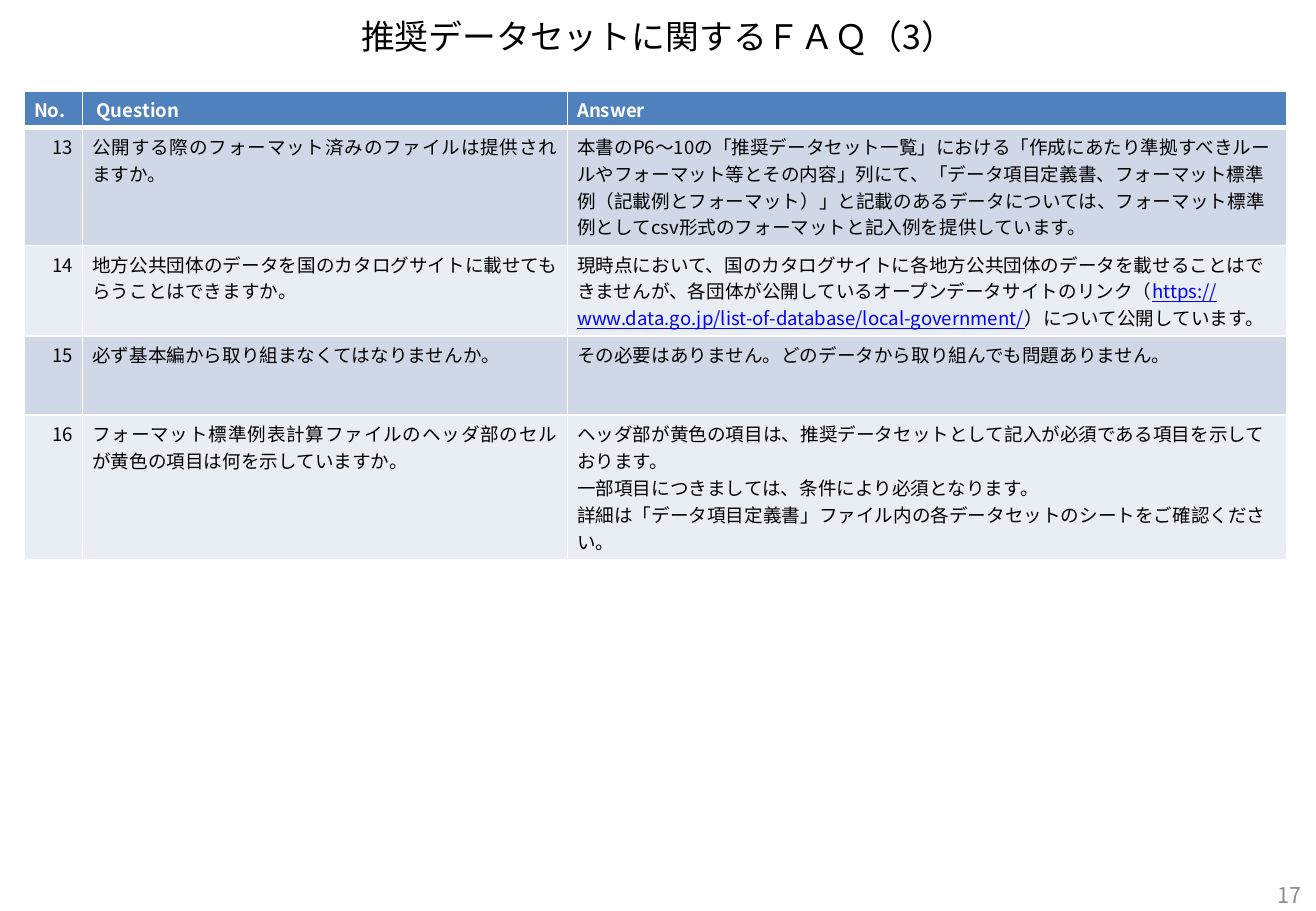
import pptx
import pptx.dml.color
import pptx.enum.text
import pptx.oxml.ns
import pptx.util
from dataclasses import dataclass
from lxml import etree

inch = pptx.util.Inches
qn = pptx.oxml.ns.qn
rgb = pptx.dml.color.RGBColor.from_string
align = pptx.enum.text.PP_ALIGN
anchor = pptx.enum.text.MSO_ANCHOR


@dataclass
class Theme:
    font: str = "Noto Sans CJK JP"
    text: str = "000000"
    light: str = "FFFFFF"
    header: str = "4F81BD"
    bands: tuple = ("D0D8E8", "E9EDF4")
    link: str = "0000FF"
    number: str = "8C8C8C"
    title_size: float = 20
    body_size: float = 11
    number_size: float = 12.9


theme = Theme()


def style(p, size, color, alignment, bold=False):
    p.alignment = alignment
    p.font.size = pptx.util.Pt(size)
    p.font.bold = bold
    p.font.color.rgb = rgb(color)
    p.font.name = theme.font
    latin = p._p.pPr.find(qn("a:defRPr")).find(qn("a:latin"))
    latin.addnext(latin.makeelement(qn("a:ea"), {"typeface": theme.font}))


def border(cell, side, points):
    ln = etree.SubElement(cell._tc.get_or_add_tcPr(), qn(f"a:ln{side}"), w=str(pptx.util.Pt(points)))
    fill = etree.SubElement(ln, qn("a:solidFill"))
    etree.SubElement(fill, qn("a:srgbClr"), val=theme.light)


prs = pptx.Presentation()
prs.slide_width, prs.slide_height = inch(10.83), inch(7.5)
s = prs.slides.add_slide(prs.slide_layouts[5])

# Title
title = s.shapes.title
title.left, title.top, title.width, title.height = inch(0.54), inch(0.01), inch(9.75), inch(0.57)
tf = title.text_frame
tf.text = "推奨データセットに関するＦＡＱ（3）"
tf.vertical_anchor = anchor.MIDDLE
tf.auto_size = pptx.enum.text.MSO_AUTO_SIZE.NONE
style(tf.paragraphs[0], theme.title_size, theme.text, align.CENTER)

# Questions and answers: each line of an answer is a paragraph
url = "https://www.data.go.jp/list-of-database/local-government/"
faq = [
    ("No.", " Question", "Answer"),
    ("13", "公開する際のフォーマット済みのファイルは提供されますか。",
     "本書のP6～10の「推奨データセット一覧」における「作成にあたり準拠すべきルールやフォーマット等とその内容」列にて、"
     "「データ項目定義書、フォーマット標準例（記載例とフォーマット）」と記載のあるデータについては、"
     "フォーマット標準例としてcsv形式のフォーマットと記入例を提供しています。"),
    ("14", "地方公共団体のデータを国のカタログサイトに載せてもらうことはできますか。",
     "現時点において、国のカタログサイトに各地方公共団体のデータを載せることはできませんが、"
     f"各団体が公開しているオープンデータサイトのリンク（{url}）について公開しています。"),
    ("15", "必ず基本編から取り組まなくてはなりませんか。",
     "その必要はありません。どのデータから取り組んでも問題ありません。"),
    ("16", "フォーマット標準例表計算ファイルのヘッダ部のセルが黄色の項目は何を示していますか。",
     "ヘッダ部が黄色の項目は、推奨データセットとして記入が必須である項目を示しております。\n"
     "一部項目につきましては、条件により必須となります。\n"
     "詳細は「データ項目定義書」ファイル内の各データセットのシートをご確認ください。"),
]
widths = [0.48, 3.99, 5.92]
heights = [0.29, 0.97, 0.74, 0.65, 1.18]
alignments = [align.RIGHT, align.JUSTIFY, align.LEFT]

# Table
table = s.shapes.add_table(len(faq), len(widths), inch(0.2), inch(0.75),
                           inch(sum(widths)), inch(sum(heights))).table
for column, width in zip(table.columns, widths):
    column.width = inch(width)
for i, (row, height) in enumerate(zip(table.rows, heights)):
    row.height = inch(height)
    head = i == 0
    for cell, text, alignment in zip(row.cells, faq[i], alignments):
        cell.margin_left = cell.margin_right = inch(0.08)
        cell.margin_top = cell.margin_bottom = inch(0.04)
        cell.vertical_anchor = anchor.MIDDLE if head else anchor.TOP
        for side in "LRTB":
            border(cell, side, 3 if (head and side == "B") or (i == 1 and side == "T") else 1)
        cell.fill.solid()
        cell.fill.fore_color.rgb = rgb(theme.header if head else theme.bands[(i - 1) % 2])
        for j, line in enumerate(text.split("\n")):
            p = cell.text_frame.paragraphs[0] if j == 0 else cell.text_frame.add_paragraph()
            before, found, after = line.partition(url)
            for part in filter(None, (before, found, after)):
                r = p.add_run()
                r.text = part
                if part == url:
                    r.font.color.rgb = rgb(theme.link)
                    r.font.underline = True
            style(p, theme.body_size, theme.light if head else theme.text,
                  align.JUSTIFY if head else alignment, head)

# Page number
sp = s.shapes.add_textbox(inch(8.28), inch(7.24), inch(2.53), inch(0.26))
tf = sp.text_frame
tf.word_wrap = True
tf.vertical_anchor = anchor.MIDDLE
tf.text = "17"
style(tf.paragraphs[0], theme.number_size, theme.number, align.RIGHT)

prs.save("out.pptx")
